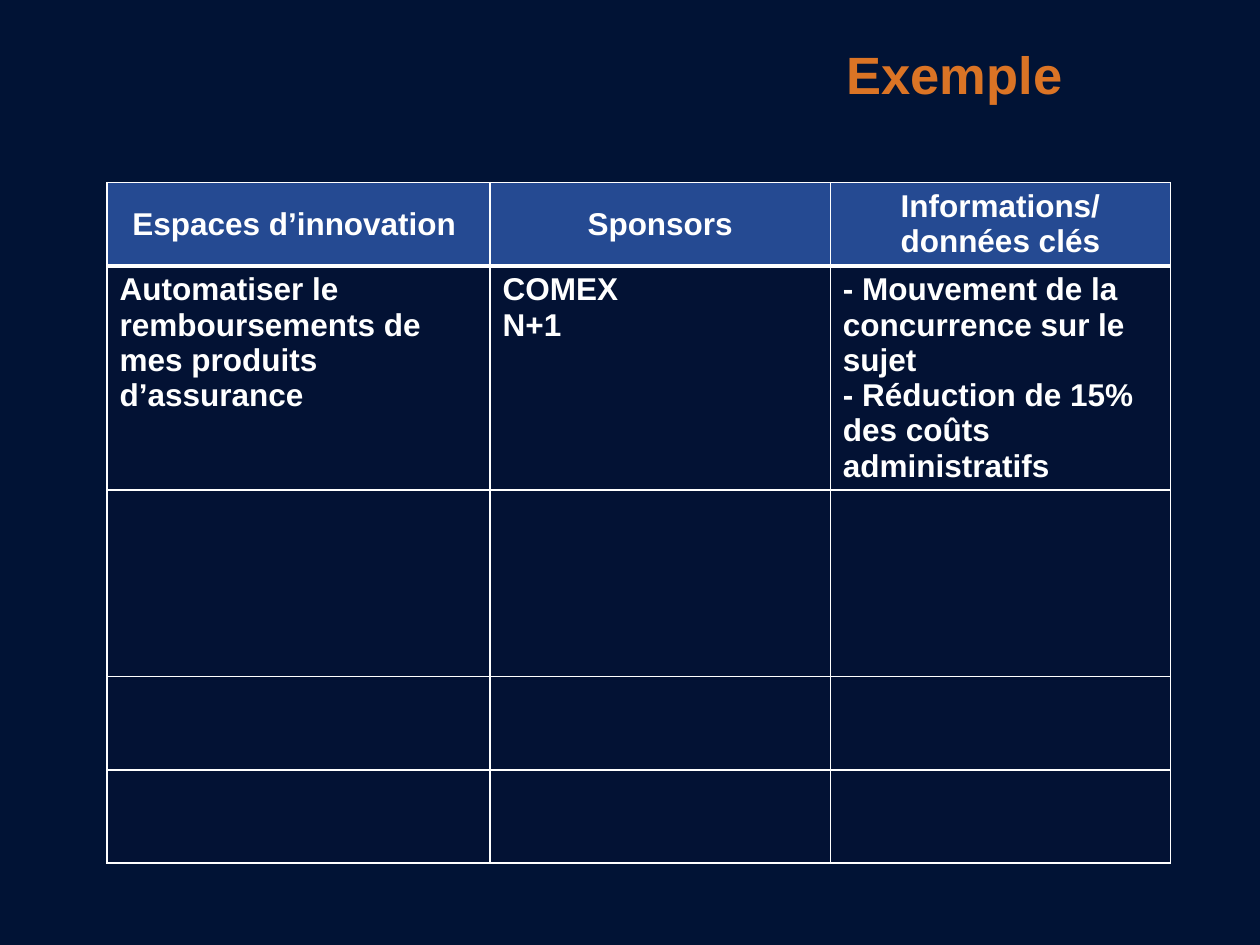
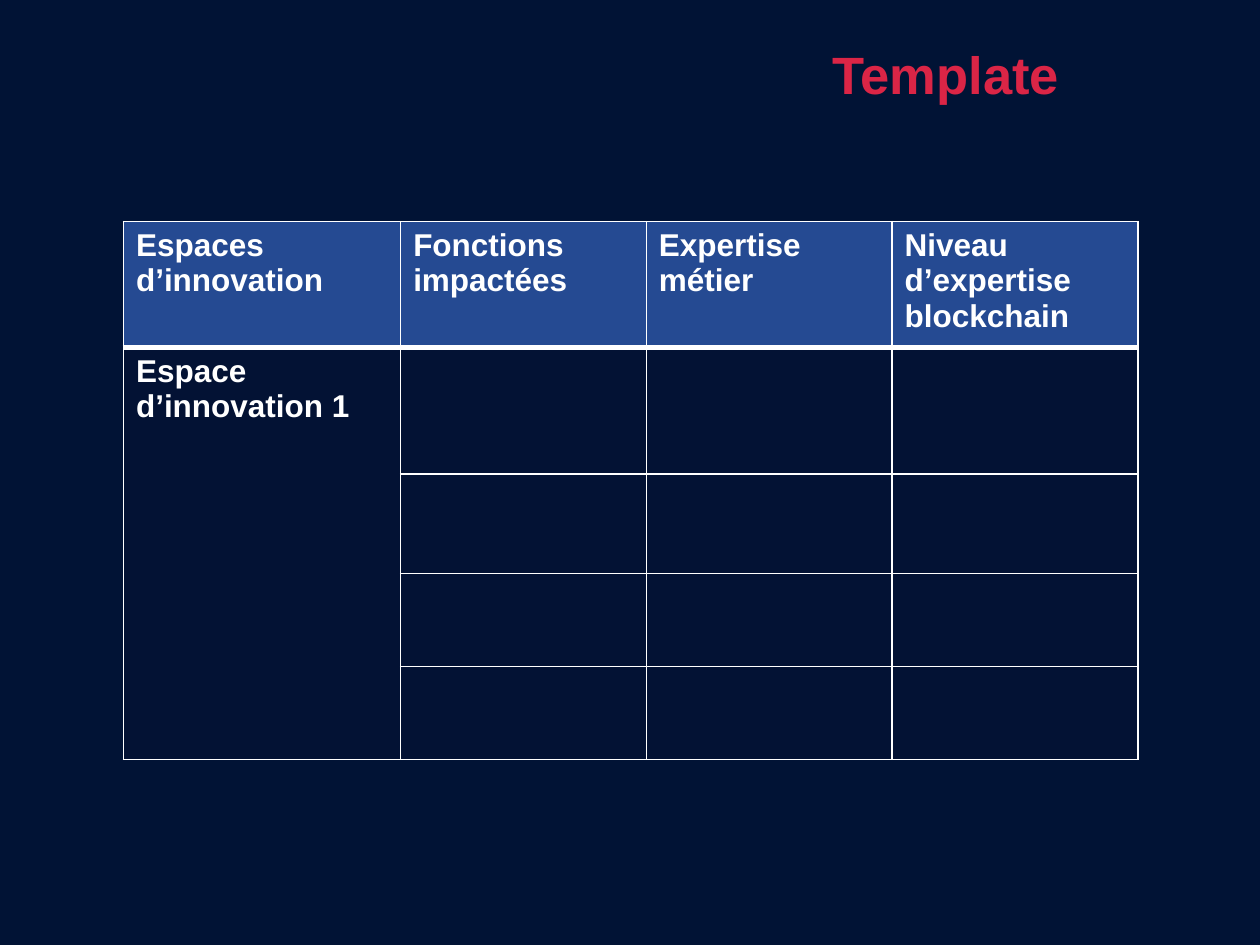
from lxml import etree
from pptx import Presentation
from pptx.dml.color import RGBColor
from pptx.enum.text import MSO_ANCHOR, PP_ALIGN
from pptx.oxml.ns import qn
from pptx.util import Inches, Pt

CENTER, MIDDLE = PP_ALIGN.CENTER, MSO_ANCHOR.MIDDLE
FONT = "Arial"
COLORS = {
    "background": "011335", "header": "254A92", "body": "031234",
    "white": "FFFFFF", "orange": "DB7425", "red": "DB2546",
}
THIN, THICK = 1, 3  # border widths in points
TITLE_TOP, TITLE_HEIGHT = 0.23, 0.71

# Content: rows list only their filled cells, each cell a list of paragraphs
SLIDES = [
    {
        "title": "Exemple", "title_color": "orange",
        "title_left": 6.62, "title_width": 1.96,
        "table_at": (0.85, 1.45), "centered_header": True,
        "columns": [3.04, 2.7, 2.7],
        "row_heights": [0.65, 1.78, 1.48, 0.74, 0.74],
        "rows": [
            [["Espaces d’innovation "], ["Sponsors"], ["Informations/données clés"]],
            [
                ["Automatiser le remboursements de mes produits d’assurance"],
                ["COMEX", "N+1"],
                ["- Mouvement de la concurrence sur le sujet",
                 "- Réduction de 15% des coûts administratifs"],
            ],
        ],
    },
    {
        "title": "Template", "title_color": "red",
        "title_left": 6.51, "title_width": 2.06,
        "table_at": (0.98, 1.76), "merged_first_column": True,
        "columns": [2.2, 1.95, 1.95, 1.95],
        "row_heights": [0.93, 1, 0.79, 0.74, 0.74],
        "rows": [
            [["Espaces d’innovation"], ["Fonctions impactées"],
             ["Expertise métier"], ["Niveau d’expertise blockchain"]],
            [["Espace d’innovation 1"]],
        ],
    },
]


def rgb(name):
    return RGBColor.from_string(COLORS[name])


def write(frame, paragraphs, size, color, align=None):
    frame.text = "\n".join(paragraphs)
    for paragraph in frame.paragraphs:
        paragraph.alignment = align
        font = paragraph.font
        font.name, font.size, font.bold = FONT, Pt(size), True
        for run in paragraph.runs:
            run.font.name, run.font.size, run.font.bold = FONT, Pt(size), True
            run.font.color.rgb = rgb(color)


def set_borders(cell, top, bottom):
    """Border lines must come before the fill in the cell properties."""
    properties = cell._tc.get_or_add_tcPr()
    widths = {"L": THIN, "R": THIN, "T": top, "B": bottom}
    for position, (side, width) in enumerate(widths.items()):
        line = etree.Element(qn(f"a:ln{side}"), w=str(Pt(width)))
        fill = etree.SubElement(line, qn("a:solidFill"))
        etree.SubElement(fill, qn("a:srgbClr"), val=COLORS["white"])
        properties.insert(position, line)


def add_title(slide, content):
    box = slide.shapes.add_textbox(
        Inches(content["title_left"]), Inches(TITLE_TOP),
        Inches(content["title_width"]), Inches(TITLE_HEIGHT))
    frame = box.text_frame
    frame.word_wrap = True
    frame.margin_left = frame.margin_right = Inches(0.1)
    frame.margin_top = frame.margin_bottom = Inches(0.1)
    write(frame, [content["title"]], 30, content["title_color"])


def add_grid(slide, content):
    columns, heights = content["columns"], content["row_heights"]
    left, top = content["table_at"]
    table = slide.shapes.add_table(
        len(heights), len(columns), Inches(left), Inches(top),
        Inches(sum(columns)), Inches(sum(heights))).table
    table.horz_banding = False
    for column, width in zip(table.columns, columns):
        column.width = Inches(width)

    for r, height in enumerate(heights):
        table.rows[r].height = Inches(height)
        texts = content["rows"][r] if r < len(content["rows"]) else []
        centered = r == 0 and content.get("centered_header")
        for c in range(len(columns)):
            cell = table.cell(r, c)
            cell.fill.solid()
            cell.fill.fore_color.rgb = rgb("body" if r else "header")
            set_borders(cell, top=THICK if r == 1 else THIN,
                        bottom=THIN if r else THICK)
            if c < len(texts):
                write(cell.text_frame, texts[c], 18, "white",
                      CENTER if centered else None)
            if centered:
                cell.vertical_anchor = MIDDLE

    if content.get("merged_first_column"):
        table.cell(1, 0).merge(table.cell(len(heights) - 1, 0))


def main():
    deck = Presentation()
    deck.slide_width, deck.slide_height = Inches(10), Inches(7.5)
    blank = deck.slide_layouts[6]
    for content in SLIDES:
        slide = deck.slides.add_slide(blank)
        slide.background.fill.solid()
        slide.background.fill.fore_color.rgb = rgb("background")
        add_grid(slide, content)
        add_title(slide, content)
    deck.save("out.pptx")


if __name__ == "__main__":
    main()
